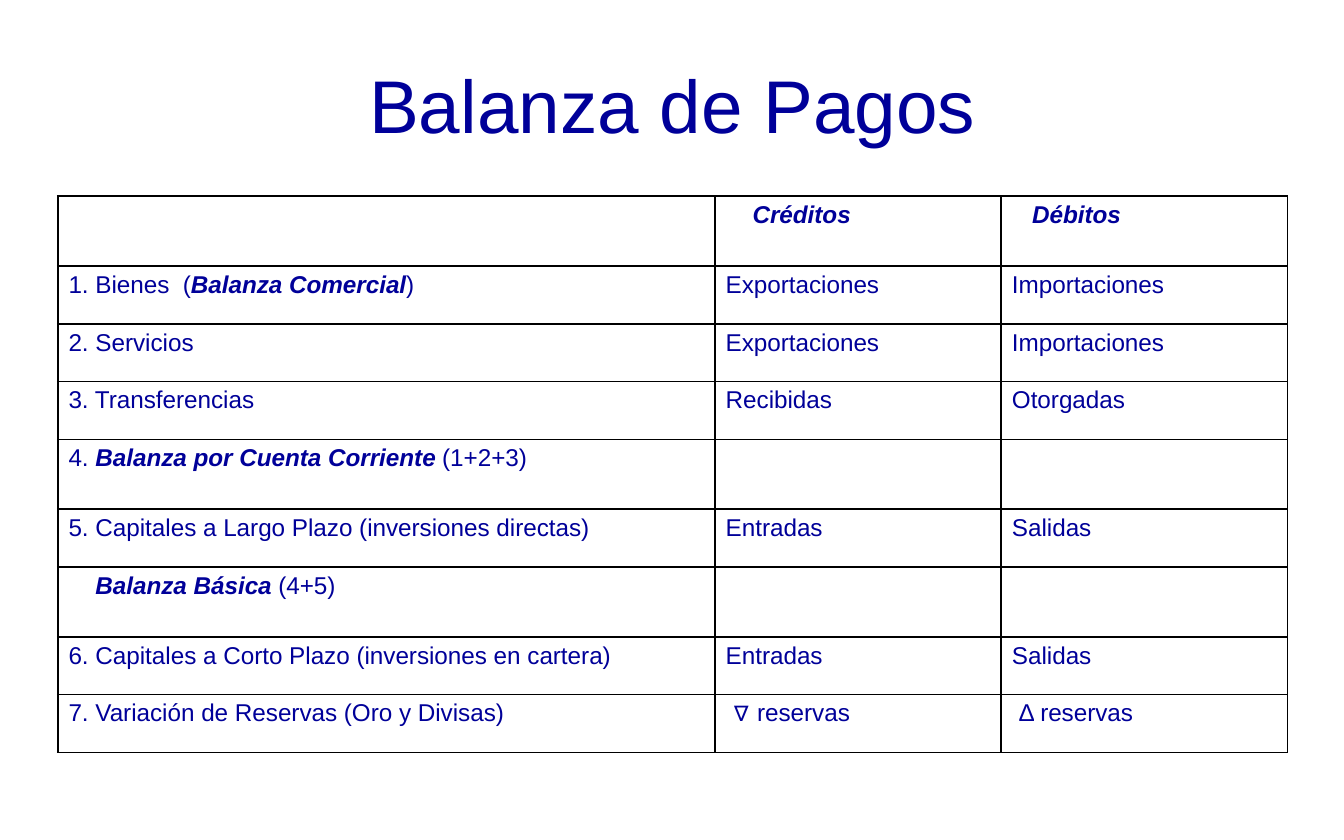
from lxml import etree
from pptx import Presentation
from pptx.dml.color import RGBColor
from pptx.enum.text import MSO_ANCHOR, PP_ALIGN
from pptx.oxml.ns import qn
from pptx.util import Inches, Pt

COLORS = {"ink": "000099", "rule": "000000"}
FONT = "Arial"
CENTER, LEFT, JUSTIFY = PP_ALIGN.CENTER, PP_ALIGN.LEFT, PP_ALIGN.JUSTIFY
MIDDLE = MSO_ANCHOR.MIDDLE
TITLE_ONLY = 5
MARGIN_X, MARGIN_Y = 0.08, 0.04

COLUMN_WIDTHS = [4.89, 2.13, 2.13]
SHORT_ROW, TALL_ROW = 0.43, 0.52
TALL_ROWS = {0, 4, 6}

# Each cell is a list of (words, emphasised) runs
ACCOUNTS = [
    [[], [("Créditos", True)], [("Débitos", True)]],
    [[("1. Bienes  (", False), ("Balanza Comercial", True), (")", False)],
     [("Exportaciones", False)], [("Importaciones", False)]],
    [[("2. Servicios", False)], [("Exportaciones", False)], [("Importaciones", False)]],
    [[("3. Transferencias", False)], [("Recibidas", False)], [("Otorgadas", False)]],
    [[("4. ", False), ("Balanza por Cuenta Corriente", True), (" (1+2+3)", False)], [], []],
    [[("5. Capitales a Largo Plazo (inversiones directas)", False)],
     [("Entradas", False)], [("Salidas", False)]],
    [[("Balanza Básica", True), (" (4+5)", False)], [], []],
    [[("6. Capitales a Corto Plazo (inversiones en cartera)", False)],
     [("Entradas", False)], [("Salidas", False)]],
    [[("7. Variación de Reservas (Oro y Divisas)", False)],
     [("∇ reservas", False)], [("Δ reservas", False)]],
]
# Extra left indent by (row, column)
INDENTS = {(0, 1): 0.2, (0, 2): 0.15, (6, 0): 0.2, (8, 1): 0.05, (8, 2): 0.05}


def add_run(paragraph, words, size, emphasised=False):
    run = paragraph.add_run()
    run.text = words
    run.font.name = FONT
    run.font.size = Pt(size)
    run.font.bold = run.font.italic = emphasised
    run.font.color.rgb = RGBColor.from_string(COLORS["ink"])


def add_borders(cell):
    properties = cell._tc.get_or_add_tcPr()
    for side in ("a:lnL", "a:lnR", "a:lnT", "a:lnB"):
        line = etree.SubElement(properties, qn(side), w=str(Pt(1)))
        fill = etree.SubElement(line, qn("a:solidFill"))
        etree.SubElement(fill, qn("a:srgbClr"), val=COLORS["rule"])


def place_title(slide, left, top, width, height):
    title = slide.shapes.title
    title.left, title.top = Inches(left), Inches(top)
    title.width, title.height = Inches(width), Inches(height)
    frame = title.text_frame
    frame.vertical_anchor = MIDDLE
    frame.margin_left = frame.margin_right = Inches(MARGIN_X)
    frame.margin_top = frame.margin_bottom = Inches(MARGIN_Y)
    heading = frame.paragraphs[0]
    heading.alignment = CENTER
    add_run(heading, "Balanza de Pagos", 40)


def fill_cell(cell, runs, indent, alignment):
    cell.margin_left = Inches(MARGIN_X + indent)
    cell.margin_right = Inches(MARGIN_X)
    cell.margin_top = cell.margin_bottom = Inches(MARGIN_Y)
    add_borders(cell)
    cell.fill.background()
    entry = cell.text_frame.paragraphs[0]
    entry.alignment = alignment
    for words, emphasised in runs:
        add_run(entry, words, 13, emphasised)


def place_accounts(slide, left, top, width, height):
    accounts = slide.shapes.add_table(
        len(ACCOUNTS), len(COLUMN_WIDTHS),
        Inches(left), Inches(top), Inches(width), Inches(height)).table
    accounts.first_row = accounts.horz_banding = False
    for column, column_width in zip(accounts.columns, COLUMN_WIDTHS):
        column.width = Inches(column_width)
    for r, account in enumerate(ACCOUNTS):
        accounts.rows[r].height = Inches(TALL_ROW if r in TALL_ROWS else SHORT_ROW)
        for c, runs in enumerate(account):
            alignment = LEFT if r > 0 and c == 1 else JUSTIFY
            fill_cell(accounts.cell(r, c), runs, INDENTS.get((r, c), 0), alignment)


def main():
    deck = Presentation()
    deck.slide_width, deck.slide_height = Inches(10), Inches(6.25)
    slide = deck.slides.add_slide(deck.slide_layouts[TITLE_ONLY])
    place_title(slide, 0.5, 0.25, 9, 1.04)
    place_accounts(slide, 0.43, 1.46, 9.15, 4.12)
    deck.save("out.pptx")


if __name__ == "__main__":
    main()
